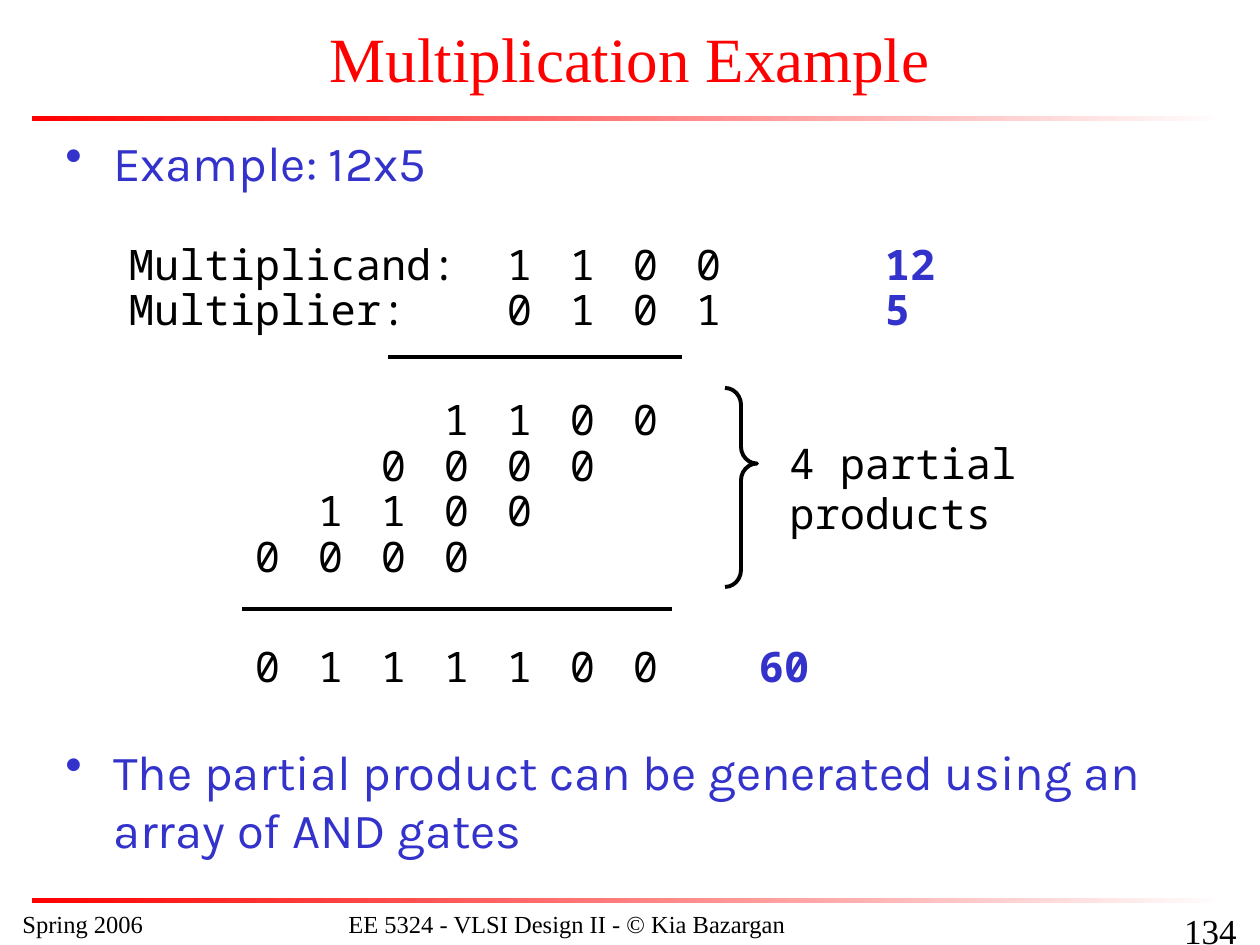
from lxml.etree import SubElement
from pptx import Presentation
from pptx.dml.color import RGBColor
from pptx.enum.shapes import MSO_CONNECTOR as Connector, MSO_SHAPE as Shape
from pptx.enum.text import MSO_ANCHOR as Anchor, PP_ALIGN as Align
from pptx.oxml.ns import qn
from pptx.util import Pt

RED = RGBColor(0xFF, 0x00, 0x00)
WHITE = RGBColor(0xFF, 0xFF, 0xFF)
BLACK = RGBColor(0x00, 0x00, 0x00)
BLUE = RGBColor(0x33, 0x33, 0xCC)
SERIF, SANS, MONO = "Times New Roman", "Karla", "Noto Sans Mono"
PX = 914400 // 126
TAB, TAB_COUNT = 63, 12

TITLE = "Multiplication Example"
BULLETS = [
    ("Example: 12x5", (53, 126, 1155, 73)),
    ("The partial product can be generated using an array of AND gates",
     (53, 735, 1155, 136)),
]
# Each row: label, tabs before the digits, digits, tabs before the value, value
ROW_GROUPS = [
    [("Multiplicand:", 1, "1100", 3, "12"), ("Multiplier:", 2, "0101", 3, "5")],
    [("", 5, "1100", 0, ""), ("", 4, "0000", 0, ""),
     ("", 3, "1100", 0, ""), ("", 2, "0000", 0, "")],
    [("", 2, "0111100", 2, "60")],
]
BRACE_LABEL = ["4 partial", "products"]
FOOTERS = [
    ("Spring 2006", (10, 903, 262, 32), 14, Align.LEFT),
    ("EE 5324 - VLSI Design II - © Kia Bazargan", (336, 903, 588, 42), 14, Align.LEFT),
    ("134", (987, 903, 262, 32), 20, Align.RIGHT),
]
BAR_TOPS = [116, 898]
SUM_LINES = [(388, 682, 357), (242, 672, 609)]
BRACE = (725, 388, 32, 199)


def scaled(*lengths):
    return [length * PX for length in lengths]


def add_text(slide, box, paragraphs, font, size, color, align=Align.LEFT,
             anchor=Anchor.TOP, inset=None, wrap=True, bullet=False,
             leading=None, gap=0, tabs=0):
    """Add paragraphs made of lines, each line a list of (text, accented) runs."""
    frame = slide.shapes.add_textbox(*scaled(*box)).text_frame
    frame.word_wrap = wrap
    frame.vertical_anchor = anchor
    if inset is not None:
        frame.margin_left = frame.margin_right = inset * PX
        frame.margin_top = frame.margin_bottom = (inset + 1) * PX
    for index, lines in enumerate(paragraphs):
        paragraph = frame.add_paragraph() if index else frame.paragraphs[0]
        paragraph.alignment = align
        paragraph.space_before = Pt(gap if index else 0)
        if leading:
            paragraph.line_spacing = Pt(leading)
        properties = paragraph._p.get_or_add_pPr()
        if bullet:
            properties.set("marL", str(48 * PX))
            properties.set("indent", str(-48 * PX))
            bullet_color = SubElement(properties, qn("a:buClr"))
            SubElement(bullet_color, qn("a:srgbClr"), val=str(color))
            SubElement(properties, qn("a:buChar"), char="•")
        if tabs:
            stops = SubElement(properties, qn("a:tabLst"))
            for stop in range(1, tabs + 1):
                SubElement(stops, qn("a:tab"), pos=str(stop * TAB * PX), algn="l")
        for number, line in enumerate(lines):
            if number:
                paragraph.add_line_break()
            for text, accented in line:
                run = paragraph.add_run()
                run.text = text
                run.font.name = font
                run.font.size = Pt(size)
                run.font.bold = accented
                run.font.color.rgb = BLUE if accented else color


def row_runs(label, lead, digits, skip, value):
    runs = [(label + "\t" * lead + "\t".join(digits) + "\t" * skip, False)]
    return runs + [(value, True)] if value else runs


def add_bar(slide, top):
    bar = slide.shapes.add_shape(Shape.RECTANGLE, *scaled(32, top, 1197, 5))
    bar.shadow.inherit = False
    bar.line.fill.background()
    bar.fill.gradient()
    bar.fill.gradient_angle = 0
    for stop, color in zip(bar.fill.gradient_stops, (RED, WHITE)):
        stop.color.rgb = color


def add_sum_line(slide, left, right, top):
    rule = slide.shapes.add_connector(Connector.STRAIGHT, *scaled(left, top, right, top))
    rule.line.color.rgb = BLACK
    rule.line.width = Pt(2.25)
    SubElement(rule._element.spPr, qn("a:effectLst"))


def add_brace(slide):
    brace = slide.shapes.add_shape(Shape.RIGHT_BRACE, *scaled(*BRACE))
    brace.shadow.inherit = False
    brace.adjustments[0], brace.adjustments[1] = 0.53, 0.38
    brace.fill.background()
    brace.line.color.rgb = BLACK
    brace.line.width = Pt(2.25)


def main():
    deck = Presentation()
    deck.slide_width, deck.slide_height = scaled(1260, 945)
    slide = deck.slides.add_slide(deck.slide_layouts[6])
    for top in BAR_TOPS:
        add_bar(slide, top)
    for text, box, size, align in FOOTERS:
        add_text(slide, box, [[[(text, False)]]], SERIF, size, BLACK, align=align)
    add_text(slide, (0, 10, 1260, 95), [[[(TITLE, False)]]], SERIF, 36, RED,
             align=Align.CENTER, anchor=Anchor.MIDDLE)
    for text, box in BULLETS:
        add_text(slide, box, [[[(text, False)]]], SANS, 28, BLUE, bullet=True)
    groups = [[row_runs(*row) for row in group] for group in ROW_GROUPS]
    add_text(slide, (126, 239, 820, 464), groups, MONO, 24, BLACK, inset=3,
             leading=26, gap=37, tabs=TAB_COUNT)
    add_text(slide, (777, 431, 389, 63), [[[(line, False)] for line in BRACE_LABEL]],
             MONO, 24, BLACK)
    for line in SUM_LINES:
        add_sum_line(slide, *line)
    add_brace(slide)
    deck.save("out.pptx")


if __name__ == "__main__":
    main()
